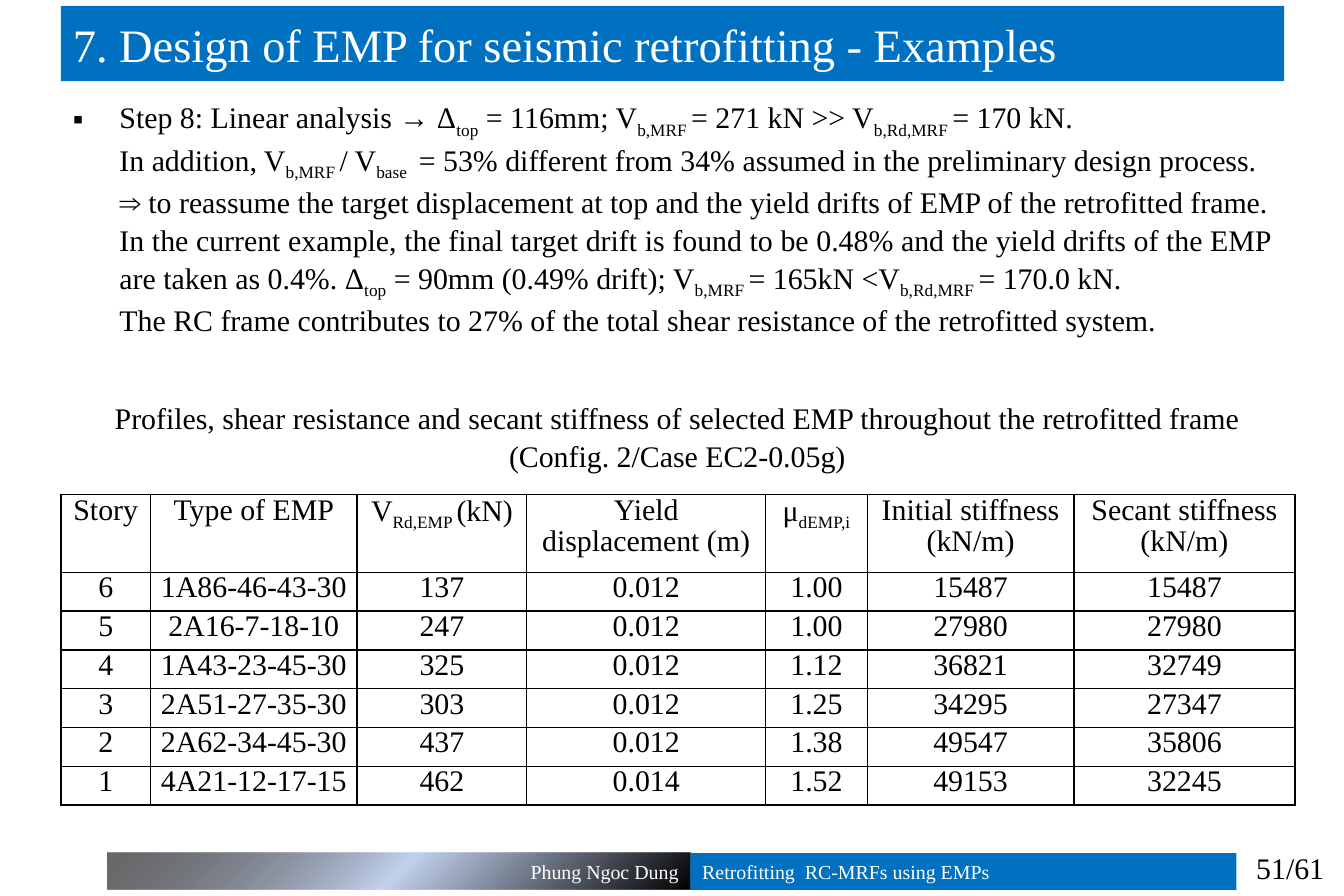
from lxml import etree
from pptx import Presentation
from pptx.dml.color import RGBColor
from pptx.enum.shapes import MSO_SHAPE
from pptx.enum.text import MSO_ANCHOR, MSO_AUTO_SIZE, PP_ALIGN
from pptx.oxml import parse_xml
from pptx.oxml.ns import nsdecls, qn
from pptx.util import Inches, Pt

RECT = MSO_SHAPE.RECTANGLE
TOP, MIDDLE = MSO_ANCHOR.TOP, MSO_ANCHOR.MIDDLE
NO_FIT = MSO_AUTO_SIZE.NONE
LEFT, CENTER, RIGHT = PP_ALIGN.LEFT, PP_ALIGN.CENTER, PP_ALIGN.RIGHT
JUSTIFY = PP_ALIGN.JUSTIFY

TITLE = "7. Design of EMP for seismic retrofitting - Examples"
STEPS = [
    "Step 8: Linear analysis → Δ~top~ = 116mm; V~b,MRF ~= 271 kN >> V~b,Rd,MRF ~= 170 kN.",
    "In addition, V~b,MRF ~/ V~base ~ = 53% different from 34% assumed in the preliminary design process.",
    "⇒ to reassume the target displacement at top and the yield drifts of EMP of the retrofitted frame.",
    "In the current example, the final target drift is found to be 0.48% and the yield drifts of the EMP "
    "are taken as 0.4%. Δ~top~ = 90mm (0.49% drift); V~b,MRF ~= 165kN <V~b,Rd,MRF ~= 170.0 kN.",
    "The RC frame contributes to 27% of the total shear resistance of the retrofitted system.",
]
CAPTION = ("Profiles, shear resistance and secant stiffness of selected EMP "
           "throughout the retrofitted frame (Config. 2/Case EC2-0.05g)")
COLUMNS = [0.75, 1.73, 1.42, 2, 0.85, 1.73, 1.85]
EMP_ROWS = [
    ["Story", "Type of EMP", "V~Rd,EMP ~(kN)", "Yield displacement (m)", "μ~dEMP,i~",
     "Initial stiffness (kN/m)", "Secant stiffness (kN/m)"],
    ["6", "1A86-46-43-30", "137", "0.012", "1.00", "15487", "15487"],
    ["5", "2A16-7-18-10", "247", "0.012", "1.00", "27980", "27980"],
    ["4", "1A43-23-45-30", "325", "0.012", "1.12", "36821", "32749"],
    ["3", "2A51-27-35-30", "303", "0.012", "1.25", "34295", "27347"],
    ["2", "2A62-34-45-30", "437", "0.012", "1.38", "49547", "35806"],
    ["1", "4A21-12-17-15", "462", "0.014", "1.52", "49153", "32245"],
]


def rgb(color):
    return RGBColor.from_string(color)


def write(tf, *texts, size=18, color="000000", align=LEFT, anchor=TOP,
          before=0, after=0, spacing=1.0):
    tf.word_wrap = True
    tf.vertical_anchor = anchor
    for i, text in enumerate(texts):
        p = tf.add_paragraph() if i else tf.paragraphs[0]
        p.alignment = align
        p.space_before, p.space_after = Pt(before), Pt(after)
        p.line_spacing = spacing
        for j, part in enumerate(text.split("~")):
            if not part:
                continue
            r = p.add_run()
            r.text = part
            r.font.name = Deck.font
            r.font.size = Pt(size)
            r.font.color.rgb = rgb(color)
            if j % 2:
                r._r.get_or_add_rPr().set("baseline", "-25000")


class Deck:
    font = "Times New Roman"
    blue = "0070C0"
    white = "FFFFFF"
    black = "000000"

    def __init__(self, width, height):
        self.prs = Presentation()
        self.prs.slide_width, self.prs.slide_height = Inches(width), Inches(height)
        self.s = self.prs.slides.add_slide(self.prs.slide_layouts[1])

    def place(self, sp, x, y, w, h):
        sp.left, sp.top, sp.width, sp.height = map(Inches, (x, y, w, h))

    def title(self, box, text):
        sp = self.s.shapes.title
        self.place(sp, *box)
        sp.fill.solid()
        sp.fill.fore_color.rgb = rgb(self.blue)
        write(sp.text_frame, text, size=28, color=self.white, anchor=MIDDLE)
        sp.text_frame.auto_size = NO_FIT

    def body(self, box, texts):
        sp = self.s.placeholders[1]
        self.place(sp, *box)
        write(sp.text_frame, *texts, align=JUSTIFY, spacing=1.05)
        sp.text_frame.auto_size = NO_FIT
        for i, p in enumerate(sp.text_frame.paragraphs):
            pPr = p._p.get_or_add_pPr()
            pPr.set("marL", str(Inches(0.39)))
            pPr.set("indent", "0" if i else str(Inches(-0.39)))
            if i:
                etree.SubElement(pPr, qn("a:buNone"))
            else:
                etree.SubElement(pPr, qn("a:buFont")).set("typeface", self.font)
                etree.SubElement(pPr, qn("a:buChar")).set("char", "▪")

    def text(self, box, text, **fmt):
        sp = self.s.shapes.add_textbox(*map(Inches, box))
        write(sp.text_frame, text, **fmt)

    def bar(self, box, text, align):
        sp = self.s.shapes.add_shape(RECT, *map(Inches, box))
        sp.shadow.inherit = False
        sp.fill.solid()
        sp.fill.fore_color.rgb = rgb(self.blue)
        sp.line.fill.background()
        write(sp.text_frame, text, size=12, color=self.white, align=align, anchor=MIDDLE)
        return sp

    def glow(self, sp):
        spPr = sp._element.spPr
        spPr.replace(spPr.find(qn("a:solidFill")), parse_xml(
            f'<a:gradFill {nsdecls("a")} rotWithShape="1"><a:gsLst>'
            '<a:gs pos="0"><a:srgbClr val="000000"/></a:gs>'
            '<a:gs pos="50000"><a:srgbClr val="C2D1ED"/></a:gs>'
            '<a:gs pos="100000"><a:srgbClr val="000000"><a:alpha val="59000"/></a:srgbClr></a:gs>'
            '</a:gsLst><a:path path="circle"><a:fillToRect l="100000" t="100000"/></a:path>'
            '</a:gradFill>'))

    def border(self, cell):
        tcPr = cell._tc.get_or_add_tcPr()
        for i, side in enumerate(("lnL", "lnR", "lnT", "lnB")):
            tcPr.insert(i, parse_xml(
                f'<a:{side} {nsdecls("a")} w="{Pt(1)}"><a:solidFill>'
                f'<a:srgbClr val="{self.black}"/></a:solidFill></a:{side}>'))

    def table(self, box, columns, rows, header):
        x, y, w, h = box
        table = self.s.shapes.add_table(len(rows), len(columns), *map(Inches, box)).table
        table.first_row = table.horz_banding = False
        for column, width in zip(table.columns, columns):
            column.width = Inches(width)
        for i, (row, texts) in enumerate(zip(table.rows, rows)):
            row.height = Inches((h - header) / (len(rows) - 1) if i else header)
            for cell, text in zip(row.cells, texts):
                cell.margin_left = cell.margin_right = Inches(0.07)
                cell.margin_top = cell.margin_bottom = 0
                cell.fill.background()
                self.border(cell)
                write(cell.text_frame, text, align=CENTER, before=3, after=3, spacing=0.96)


def main():
    deck = Deck(11.25, 7.5)
    author = deck.bar((0.9, 7.14, 4.88, 0.31), "Phung Ngoc Dung", RIGHT)
    deck.glow(author)
    deck.bar((5.78, 7.14, 4.57, 0.31), "Retrofitting  RC-MRFs using EMPs", LEFT)
    deck.text((10.35, 7.06, 0.9, 0.4), "51/61", align=CENTER)
    deck.title((0.51, 0.05, 10.24, 0.63), TITLE)
    deck.body((0.51, 0.76, 10.24, 2.22), STEPS)
    deck.table((0.51, 4.14, 10.33, 2.6), COLUMNS, EMP_ROWS, 0.65)
    deck.text((0.51, 3.28, 10.32, 0.71), CAPTION, align=CENTER, spacing=1.05)
    deck.prs.save("out.pptx")


if __name__ == "__main__":
    main()
